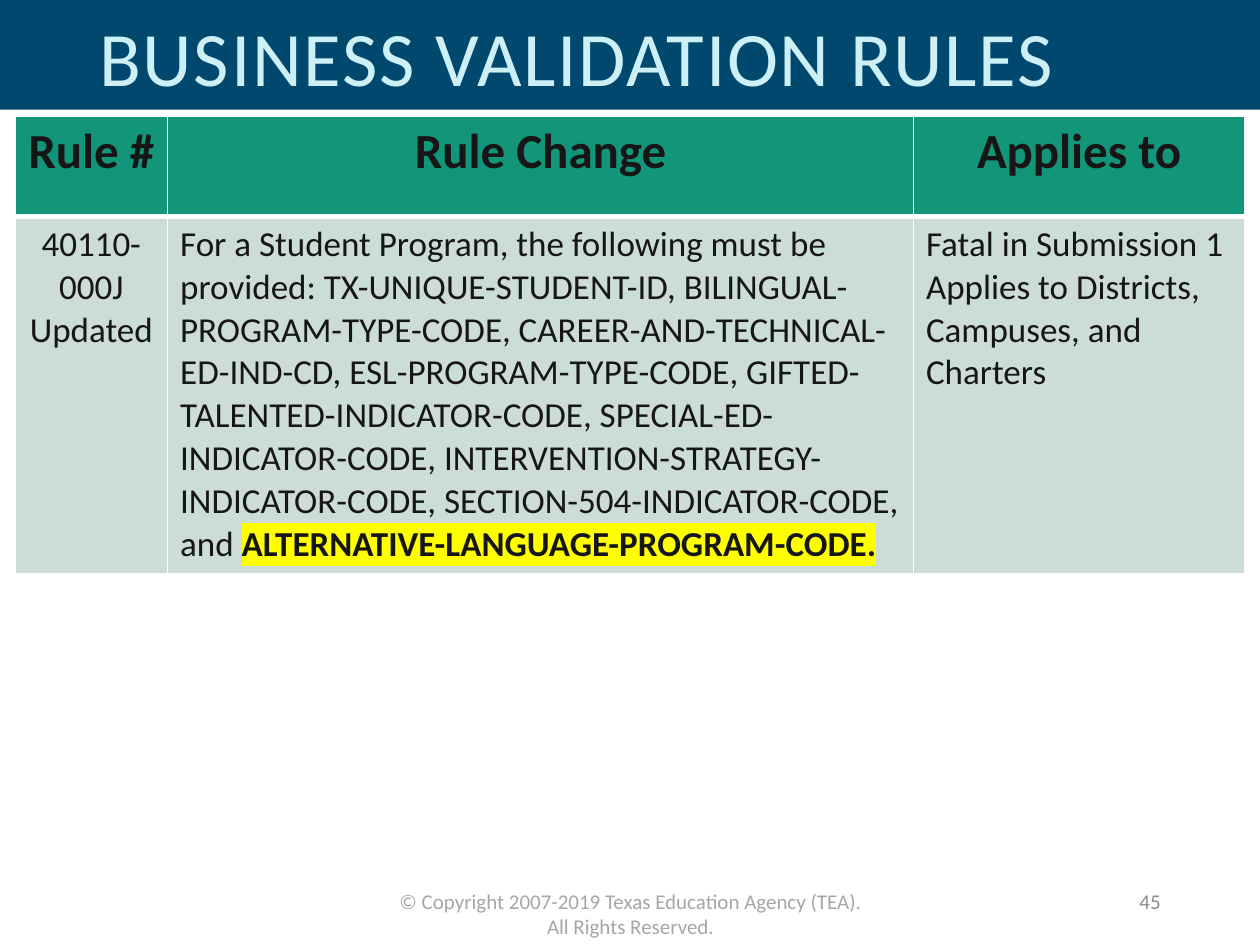
from dataclasses import dataclass

import pptx
import pptx.dml.color
import pptx.enum.shapes
import pptx.enum.text
import pptx.oxml
import pptx.oxml.ns
import pptx.util
from lxml import etree

Inches, Pt = pptx.util.Inches, pptx.util.Pt
ALIGN, ANCHOR = pptx.enum.text.PP_ALIGN, pptx.enum.text.MSO_ANCHOR
qn = pptx.oxml.ns.qn

WIDTH, HEIGHT = 10, 7.5
FONT = "Calibri"
COLORS = {
    "banner": "00486E", "title": "CCF0F5", "header": "129579", "body": "CCDDD7",
    "ink": "171616", "rule": "FFFFFF", "marker": "FFFF00",
    "copyright": "A6A6A6", "number": "8C8C8C",
}
COLUMNS = (1.21, 5.92, 2.63)


@dataclass
class Style:
    size: float
    color: str
    align: ALIGN = ALIGN.LEFT
    bold: bool = False


@dataclass
class Label:
    text: str
    box: tuple  # left, top, width, height in inches
    style: Style
    anchor: ANCHOR = ANCHOR.MIDDLE


@dataclass
class Row:
    height: float
    fill: str
    style: Style
    borders: dict  # side: line width in points
    cells: tuple  # each cell is a tuple of paragraphs
    aligns: tuple


def rgb(name: str) -> pptx.dml.color.RGBColor:
    return pptx.dml.color.RGBColor.from_string(COLORS[name])


def format_paragraph(p, style: Style) -> None:
    p.alignment = style.align
    p.font.name, p.font.size = FONT, Pt(style.size)
    p.font.color.rgb = rgb(style.color)
    if style.bold:
        p.font.bold = True


def add_label(slide, label: Label):
    sp = slide.shapes.add_textbox(*map(Inches, label.box))
    tf = sp.text_frame
    tf.word_wrap, tf.vertical_anchor = True, label.anchor
    p = tf.paragraphs[0]
    p.add_run().text = label.text
    format_paragraph(p, label.style)
    return p


def set_borders(cell, borders: dict) -> None:
    tc_pr = cell._tc.get_or_add_tcPr()
    for i, (side, width) in enumerate(borders.items()):
        ln = etree.Element(qn(f"a:ln{side}"), w=str(Pt(width)))
        fill = etree.SubElement(ln, qn("a:solidFill"))
        etree.SubElement(fill, qn("a:srgbClr"), val=COLORS["rule"])
        tc_pr.insert(i, ln)


def highlight(r) -> None:
    r.font.bold = True
    mark = etree.SubElement(r.font._element, qn("a:highlight"))
    etree.SubElement(mark, qn("a:srgbClr"), val=COLORS["marker"])


def fill_cell(cell, row: Row, paragraphs: tuple, align: ALIGN) -> None:
    cell.fill.solid()
    cell.fill.fore_color.rgb = rgb(row.fill)
    set_borders(cell, row.borders)
    tf = cell.text_frame
    for i, text in enumerate(paragraphs):
        p = tf.paragraphs[0] if i == 0 else tf.add_paragraph()
        # Text after the bar is highlighted
        plain, _, marked = text.partition("|")
        p.add_run().text = plain
        if marked:
            r = p.add_run()
            r.text = marked
            highlight(r)
        format_paragraph(p, row.style)
        p.alignment = align


def add_rules_table(slide, left: float, top: float, rows: tuple) -> None:
    height = sum(row.height for row in rows)
    frame = slide.shapes.add_table(len(rows), len(COLUMNS), Inches(left), Inches(top),
                                   Inches(sum(COLUMNS)), Inches(height))
    table = frame.table
    for column, width in zip(table.columns, COLUMNS):
        column.width = Inches(width)
    for i, row in enumerate(rows):
        table.rows[i].height = Inches(row.height)
        for j, (paragraphs, align) in enumerate(zip(row.cells, row.aligns)):
            fill_cell(table.cell(i, j), row, paragraphs, align)


TITLE = Label("BUSINESS VALIDATION RULES", (0.69, 0.05, 0.8 * WIDTH, 0.87),
              Style(44, "title"))
FOOTERS = (
    Label("© Copyright 2007-2019 Texas Education Agency (TEA). All Rights Reserved.",
          (3.04, 7, 3.93, 0.3), Style(12, "copyright", ALIGN.CENTER), ANCHOR.TOP),
    Label("45", (7.06, 6.95, 2.25, 0.4), Style(12, "number", ALIGN.RIGHT)),
)
ROWS = (
    Row(0.8, "header", Style(28, "ink", bold=True), {"L": 1, "R": 1, "T": 1, "B": 3},
        (("Rule #",), ("Rule Change",), ("Applies to",)), (ALIGN.CENTER,) * 3),
    Row(2.83, "body", Style(20, "ink"), {"L": 1, "R": 1, "T": 3, "B": 1},
        (("40110-000J Updated",),
         ("For a Student Program, the following must be provided: "
          "TX-UNIQUE-STUDENT-ID, BILINGUAL-PROGRAM-TYPE-CODE, "
          "CAREER-AND-TECHNICAL-ED-IND-CD, ESL-PROGRAM-TYPE-CODE, "
          "GIFTED-TALENTED-INDICATOR-CODE, SPECIAL-ED-INDICATOR-CODE, "
          "INTERVENTION-STRATEGY-INDICATOR-CODE, SECTION-504-INDICATOR-CODE, and "
          "|ALTERNATIVE-LANGUAGE-PROGRAM-CODE.",),
         ("Fatal in Submission 1", "Applies to Districts, Campuses, and Charters")),
        (ALIGN.CENTER, ALIGN.LEFT, ALIGN.LEFT)),
)


def main() -> None:
    prs = pptx.Presentation()
    prs.slide_width, prs.slide_height = Inches(WIDTH), Inches(HEIGHT)
    slide = prs.slides.add_slide(prs.slide_layouts[6])

    # Banner and title
    banner = slide.shapes.add_shape(pptx.enum.shapes.MSO_SHAPE.RECTANGLE,
                                    0, 0, Inches(WIDTH), Inches(0.87))
    banner.shadow.inherit = False
    banner.fill.solid()
    banner.fill.fore_color.rgb = rgb("banner")
    banner.line.fill.background()
    p = add_label(slide, TITLE)
    p.line_spacing = 0.9
    p.runs[0].font._element.set("spc", "100")

    # Validation rules
    add_rules_table(slide, 0.12, 0.92, ROWS)

    # Copyright and slide number
    for label in FOOTERS:
        add_label(slide, label)

    prs.save("out.pptx")


if __name__ == "__main__":
    main()
